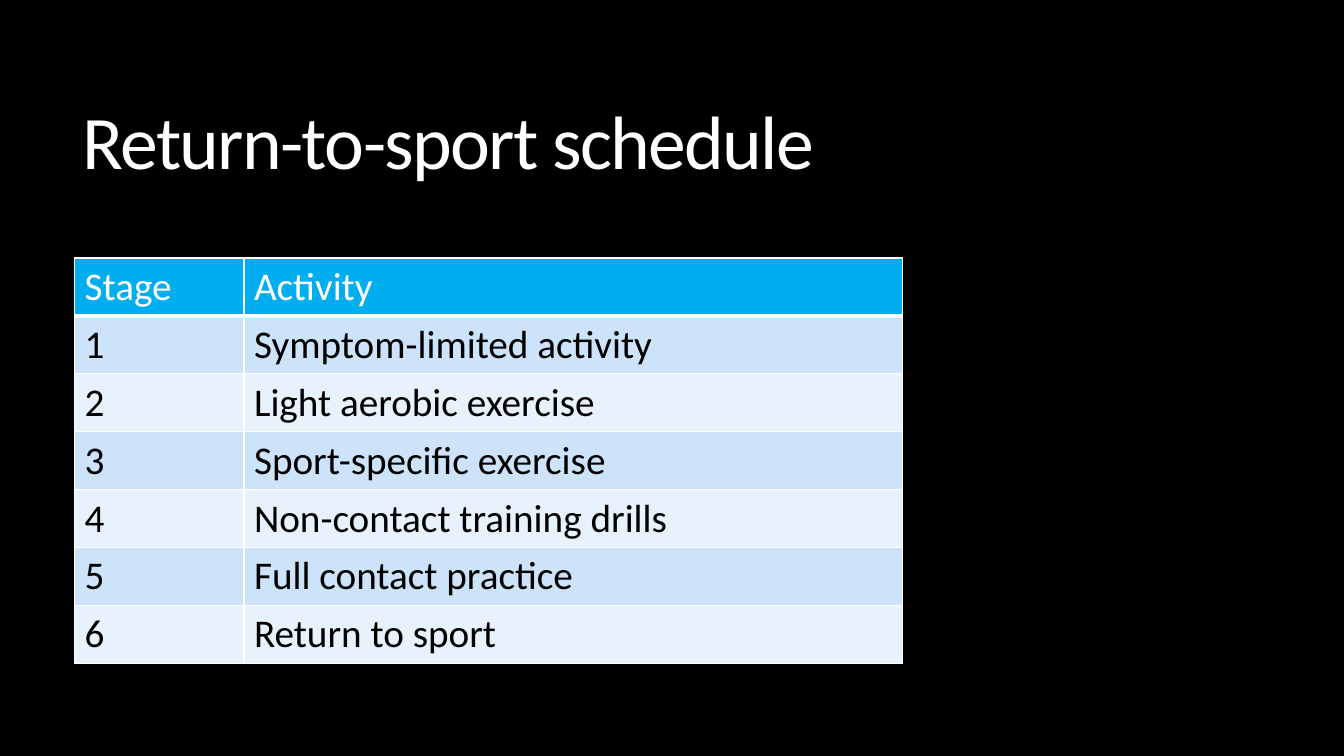
import pptx
import pptx.dml.color
import pptx.enum.text
import pptx.oxml
import pptx.oxml.ns
import pptx.util

Cm = pptx.util.Cm
Pt = pptx.util.Pt

COLORS = {
    "background": "000000",
    "light": "FFFFFF",
    "dark": "000000",
    "header": "00AEEF",
    "odd_stage": "CCE3F9",
    "even_stage": "E7F2FC",
}
ACTIVITIES = [
    "Symptom-limited activity",
    "Light aerobic exercise",
    "Sport-specific exercise",
    "Non-contact training drills",
    "Full contact practice",
    "Return to sport",
]
COLUMN_WIDTHS = [Cm(4.27), Cm(16.59)]
ROW_HEIGHT = Cm(1.46)


def rgb(name):
    return pptx.dml.color.RGBColor.from_string(COLORS[name])


def paint(fill, color):
    fill.solid()
    fill.fore_color.rgb = rgb(color)


def write(paragraph, text, size, color):
    run = paragraph.add_run()
    run.text = text
    font_format = {"name": "Calibri", "size": Pt(size), "bold": False}
    for attribute, value in font_format.items():
        setattr(run.font, attribute, value)
    run.font.color.rgb = rgb(color)
    return run


def add_title(slide, text):
    title = slide.shapes.add_textbox(Cm(1.83), Cm(1.4), Cm(29.92), Cm(4.6))
    frame_format = {
        "word_wrap": True,
        "vertical_anchor": pptx.enum.text.MSO_ANCHOR.MIDDLE,
    }
    for attribute, value in frame_format.items():
        setattr(title.text_frame, attribute, value)
    paragraph = title.text_frame.paragraphs[0]
    paragraph.line_spacing = 0.85
    run = write(paragraph, text, 54, "light")
    run._r.get_or_add_rPr().set("spc", "-120")


def add_borders(cell, bottom_width):
    """Draw white cell edges, 1 pt wide except for the bottom one."""
    widths = {"lnL": 1, "lnR": 1, "lnT": 1, "lnB": bottom_width}
    properties = cell._tc.get_or_add_tcPr()
    for position, (edge, width) in enumerate(widths.items()):
        line = pptx.oxml.parse_xml(
            f'<a:{edge} {pptx.oxml.ns.nsdecls("a")} w="{Pt(width)}">'
            f'<a:solidFill><a:srgbClr val="{COLORS["light"]}"/></a:solidFill>'
            f'</a:{edge}>'
        )
        properties.insert(position, line)


def add_schedule(slide, rows):
    schedule = slide.shapes.add_table(
        len(rows), len(COLUMN_WIDTHS), Cm(1.88), Cm(6.5),
        sum(COLUMN_WIDTHS), ROW_HEIGHT * len(rows),
    ).table
    for column, width in zip(schedule.columns, COLUMN_WIDTHS):
        column.width = width
    for stage, texts in enumerate(rows):
        is_header = stage == 0
        band = "odd_stage" if stage % 2 else "even_stage"
        for column, text in enumerate(texts):
            cell = schedule.cell(stage, column)
            paint(cell.fill, "header" if is_header else band)
            add_borders(cell, 3 if is_header else 1)
            write(cell.text_frame.paragraphs[0], text, 28,
                  "light" if is_header else "dark")


def main():
    deck = pptx.Presentation()
    deck.slide_width, deck.slide_height = Cm(33.87), Cm(19.05)
    slide = deck.slides.add_slide(deck.slide_layouts[6])
    paint(slide.background.fill, "background")
    add_title(slide, "Return-to-sport schedule")
    stages = [(str(number), activity)
              for number, activity in enumerate(ACTIVITIES, start=1)]
    add_schedule(slide, [("Stage", "Activity"), *stages])
    deck.save("out.pptx")


if __name__ == "__main__":
    main()
